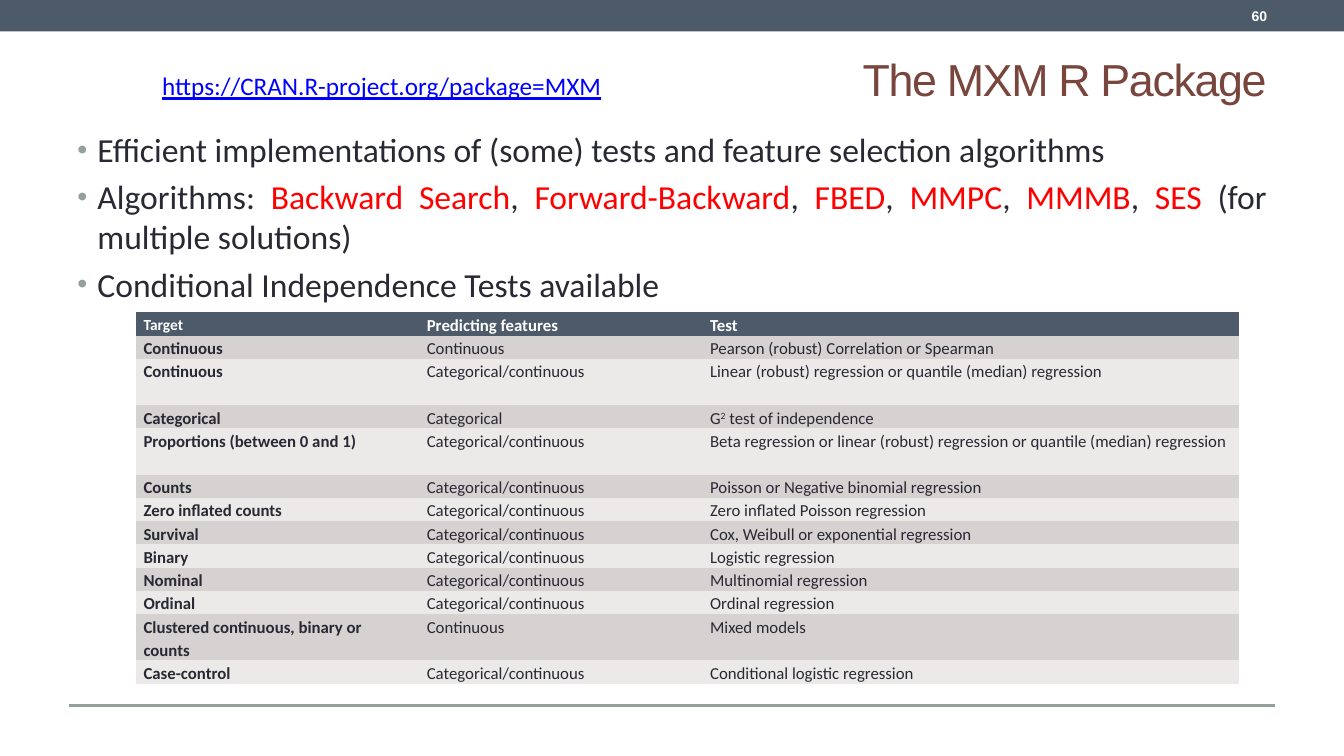
from dataclasses import dataclass

import pptx
import pptx.dml.color
import pptx.enum.shapes
import pptx.enum.text
import pptx.oxml
import pptx.oxml.ns
import pptx.util

SLATE, SAGE, BROWN, INK = "4C5A6A", "93A299", "79463D", "292934"
RED, BLUE, WHITE = "FF0000", "0000FF", "FFFFFF"
BANDS = ("D5D2D1", "EBEAE9")
NO_GRID_STYLE = "{2D5ABB26-0587-4C30-8999-92F81FD0307C}"
SLIDE_WIDTH = pptx.util.Inches(13.333)
SLIDE_HEIGHT = pptx.util.Inches(7.5)
ALIGN = pptx.enum.text.PP_ALIGN
ANCHOR = pptx.enum.text.MSO_ANCHOR


@dataclass
class Area:
    """Rectangle in percent of the slide's width and height."""
    left: float
    top: float
    width: float
    height: float

    def lengths(self) -> tuple[int, int, int, int]:
        return (across(self.left), down(self.top), across(self.width), down(self.height))


@dataclass
class TestRow:
    target: str
    features: str
    test: str
    lines: int = 1


MIXED = "Categorical/continuous"
HEADER = TestRow("Target", "Predicting features", "Test")
TESTS = [
    TestRow("Continuous", "Continuous", "Pearson (robust) Correlation or Spearman"),
    TestRow("Continuous", MIXED, "Linear (robust) regression or quantile (median) regression", 2),
    TestRow("Categorical", "Categorical", "G^2^ test of independence"),
    TestRow("Proportions (between 0 and 1)", MIXED,
            "Beta regression or linear (robust) regression or quantile (median) regression", 2),
    TestRow("Counts", MIXED, "Poisson or Negative binomial regression"),
    TestRow("Zero inflated counts", MIXED, "Zero inflated Poisson regression"),
    TestRow("Survival", MIXED, "Cox, Weibull or exponential regression"),
    TestRow("Binary", MIXED, "Logistic regression"),
    TestRow("Nominal", MIXED, "Multinomial regression"),
    TestRow("Ordinal", MIXED, "Ordinal regression"),
    TestRow("Clustered continuous, binary or counts", "Continuous", "Mixed models", 2),
    TestRow("Case-control", MIXED, "Conditional logistic regression"),
]
ALGORITHMS = ["Backward Search", "Forward-Backward", "FBED", "MMPC", "MMMB", "SES"]
BULLETS = [
    "Efficient implementations of (some) tests and feature selection algorithms",
    "Algorithms: " + ", ".join(f"*{name}*" for name in ALGORITHMS) + " (for multiple solutions)",
    "Conditional Independence Tests available",
]


def across(percent: float) -> int:
    return round(SLIDE_WIDTH * percent / 100)


def down(percent: float) -> int:
    return round(SLIDE_HEIGHT * percent / 100)


def colour(value: str) -> pptx.dml.color.RGBColor:
    return pptx.dml.color.RGBColor.from_string(value)


def write(para, text: str, *, size: float, ink: str = INK, font: str = "Calibri",
          bold: bool = False, underline: bool = False, spacing: int = 0, raised: int = 0) -> None:
    """Add one run; spacing is in hundredths of a point, raised in percent."""
    span = para.add_run()
    span.text = text
    span.font.size = pptx.util.Pt(size)
    span.font.name = font
    span.font.bold = bold
    span.font.underline = underline
    span.font.color.rgb = colour(ink)
    properties = span.font._element
    if spacing:
        properties.set("spc", str(spacing))
    if raised:
        properties.set("baseline", str(raised * 1000))


def place(shape, area: Area) -> None:
    shape.left, shape.top, shape.width, shape.height = area.lengths()


def add_bar_and_rule(page) -> None:
    bar = page.shapes.add_shape(pptx.enum.shapes.MSO_SHAPE.RECTANGLE,
                                *Area(0, 0, 100, 4.15).lengths())
    bar.shadow.inherit = False
    bar.fill.solid()
    bar.fill.fore_color.rgb = colour(SLATE)
    bar.line.fill.background()
    rule = page.shapes.add_connector(pptx.enum.shapes.MSO_CONNECTOR.STRAIGHT,
                                     across(5.1), down(93.33), across(94.9), down(93.33))
    rule.line.color.rgb = colour(SAGE)
    rule.line.width = pptx.util.Pt(2.08)
    properties = rule._element.spPr
    properties.append(pptx.oxml.parse_xml(f'<a:effectLst {pptx.oxml.ns.nsdecls("a")}/>'))


def add_title(page) -> None:
    title = page.shapes.title
    place(title, Area(5, 5.6, 90, 9.47))
    frame = title.text_frame
    frame.auto_size = pptx.enum.text.MSO_AUTO_SIZE.NONE
    frame.vertical_anchor = ANCHOR.MIDDLE
    para = frame.paragraphs[0]
    para.alignment = ALIGN.RIGHT
    write(para, "The MXM R Package", size=32, ink=BROWN, font="Arial", spacing=-100)


def set_bullet(para) -> None:
    properties = para._p.get_or_add_pPr()
    indent = across(1.5)
    properties.set("marL", str(indent))
    properties.set("indent", str(-indent))
    for markup in (f'<a:buClr {{}}><a:srgbClr val="{SAGE}"/></a:buClr>',
                   '<a:buSzPct {} val="85000"/>',
                   '<a:buFont {} typeface="Arial"/>',
                   '<a:buChar {} char="•"/>'):
        properties.append(pptx.oxml.parse_xml(markup.format(pptx.oxml.ns.nsdecls("a"))))


def add_bullets(page) -> None:
    """Fill the body; parts between asterisks are red."""
    body = page.placeholders[1]
    place(body, Area(5, 16.4, 90, 24.93))
    frame = body.text_frame
    frame.auto_size = pptx.enum.text.MSO_AUTO_SIZE.NONE
    for index, text in enumerate(BULLETS):
        para = frame.add_paragraph() if index else frame.paragraphs[0]
        para.alignment = ALIGN.JUSTIFY
        set_bullet(para)
        for part_index, part in enumerate(text.split("*")):
            write(para, part, size=24, ink=RED if part_index % 2 else INK)


def add_label(page, area: Area, text: str, *, align=ALIGN.LEFT, anchor=ANCHOR.TOP,
              **text_format) -> None:
    box = page.shapes.add_textbox(*area.lengths())
    frame = box.text_frame
    frame.word_wrap = False
    frame.vertical_anchor = anchor
    para = frame.paragraphs[0]
    para.alignment = align
    write(para, text, **text_format)


def fill_cell(cell, text: str, fill: str, **text_format) -> None:
    """Fill one cell; parts between carets are superscript."""
    cell.fill.solid()
    cell.fill.fore_color.rgb = colour(fill)
    cell.margin_left = cell.margin_right = across(0.55)
    cell.margin_top = cell.margin_bottom = 0
    para = cell.text_frame.paragraphs[0]
    para.line_spacing = 1.15
    for index, part in enumerate(text.split("^")):
        write(para, part, raised=30 * (index % 2), **text_format)


def add_test_table(page) -> None:
    rows = [HEADER, *TESTS]
    frame = page.shapes.add_table(len(rows), 3, *Area(10.13, 41.33, 82.05, 49.07).lengths())
    table = frame.table
    table._tbl.tblPr.find(pptx.oxml.ns.qn("a:tableStyleId")).text = NO_GRID_STYLE
    for column, width in zip(table.columns, (21.08, 21.08, 39.9)):
        column.width = across(width)
    for index, row in enumerate(rows):
        table.rows[index].height = down(6.13 if row.lines == 2 else 2.93)
        is_header = index == 0
        fill = SLATE if is_header else BANDS[(index - 1) % 2]
        for column, text in enumerate((row.target, row.features, row.test)):
            fill_cell(table.cell(index, column), text, fill,
                      size=11 if is_header and column == 0 else 12,
                      ink=WHITE if is_header else INK,
                      bold=is_header or column == 0)


def main() -> None:
    deck = pptx.Presentation()
    deck.slide_width, deck.slide_height = SLIDE_WIDTH, SLIDE_HEIGHT
    page = deck.slides.add_slide(deck.slide_layouts[1])
    add_bar_and_rule(page)
    add_title(page)
    add_bullets(page)
    add_label(page, Area(83.33, 0.27, 11.7, 3.73), "60", align=ALIGN.RIGHT,
              anchor=ANCHOR.MIDDLE, size=10, ink=WHITE, font="Arial", bold=True)
    add_test_table(page)
    add_label(page, Area(11.33, 8.67, 34.58, 5.33), "https://CRAN.R-project.org/package=MXM",
              size=18, ink=BLUE, underline=True)
    deck.save("out.pptx")


if __name__ == "__main__":
    main()
